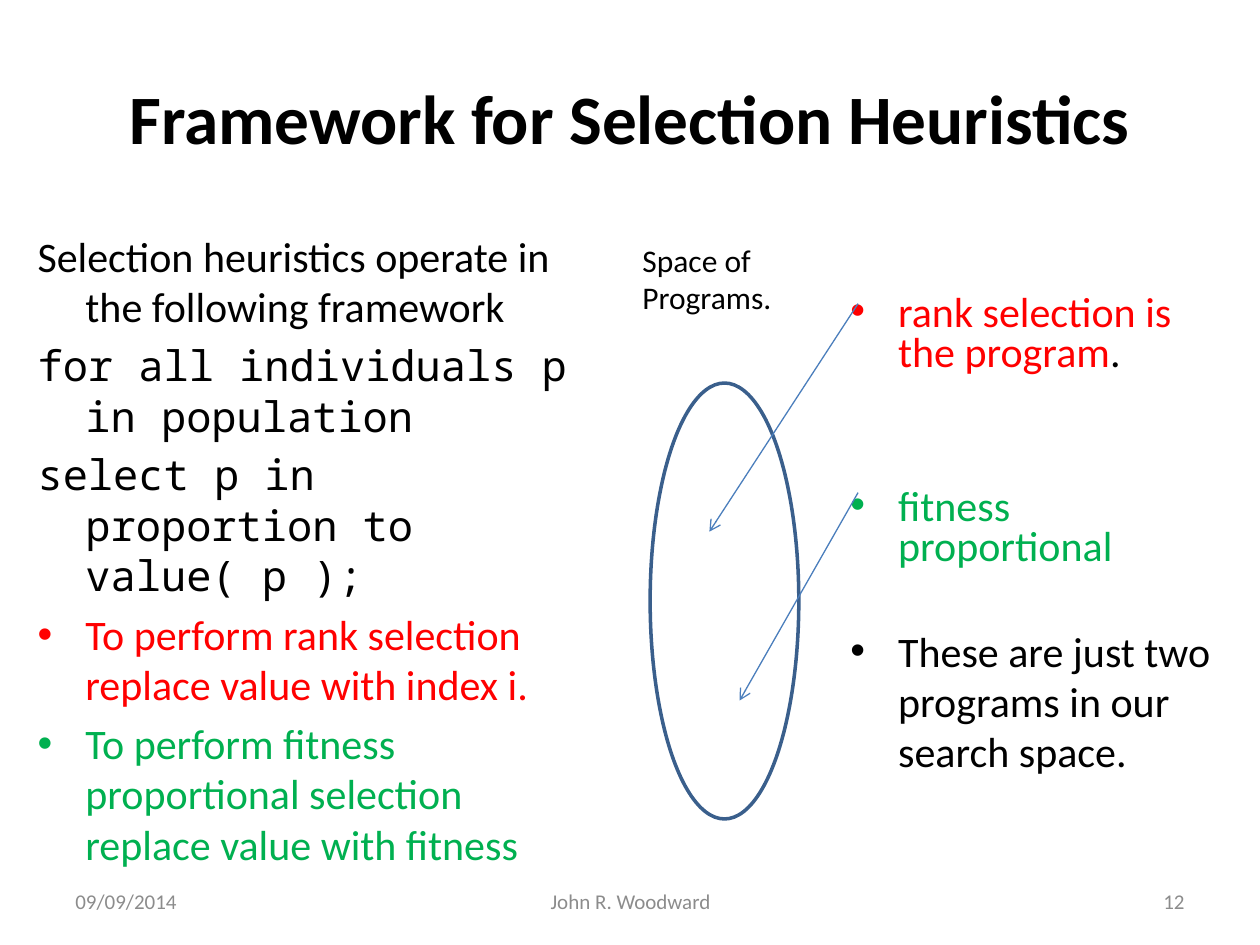
from dataclasses import dataclass
from typing import NamedTuple

from lxml.etree import SubElement
from pptx import Presentation
from pptx.dml.color import RGBColor
from pptx.enum.shapes import MSO_CONNECTOR, MSO_SHAPE
from pptx.enum.text import MSO_ANCHOR, PP_ALIGN
from pptx.oxml.ns import qn
from pptx.util import Inches, Pt

BLACK = RGBColor(0x00, 0x00, 0x00)
RED = RGBColor(0xFF, 0x00, 0x00)
GREEN = RGBColor(0x00, 0xB0, 0x50)
GREY = RGBColor(0x8C, 0x8C, 0x8C)
OUTLINE = RGBColor(0x3A, 0x5F, 0x8C)
ARROW = RGBColor(0x4B, 0x7E, 0xBC)
SANS = "Calibri"
MONO = "Noto Sans Mono"
HANG = Inches(0.38)


class Area(NamedTuple):
    left: float
    top: float
    width: float
    height: float


@dataclass
class Line:
    text: str
    color: RGBColor = BLACK
    size: float = 24
    font: str = SANS
    align: PP_ALIGN = PP_ALIGN.LEFT
    hanging: bool = False
    bullet: bool = False
    before: float = 0
    spacing: float = 1.0
    ending: str = ""  # closing black text


@dataclass
class Arrow:
    start: tuple[float, float]
    end: tuple[float, float]


def add_text(page, area: Area, lines: list[Line], anchor=MSO_ANCHOR.TOP,
             wrap: bool = True, inset_top: float = 0.05) -> None:
    box = page.shapes.add_textbox(*map(Inches, area))
    frame = box.text_frame
    frame.word_wrap = wrap
    frame.vertical_anchor = anchor
    frame.margin_top = Inches(inset_top)
    for index, line in enumerate(lines):
        para = frame.add_paragraph() if index else frame.paragraphs[0]
        write_line(para, line)


def write_line(para, line: Line) -> None:
    para.alignment = line.align
    para.space_before = Pt(line.before)
    para.line_spacing = line.spacing
    para.font.size = Pt(line.size)
    para.font.name = line.font
    for text, color in ((line.text, line.color), (line.ending, BLACK)):
        if text:
            span = para.add_run()
            span.text = text
            span.font.color.rgb = color
    properties = para._p.get_or_add_pPr()
    if line.hanging:
        properties.set("marL", str(HANG))
        properties.set("indent", str(-HANG))
    if line.bullet:
        bullet_font = properties.makeelement(qn("a:buFont"), {"typeface": "Arial"})
        bullet_char = properties.makeelement(qn("a:buChar"), {"char": "•"})
        defaults = properties.find(qn("a:defRPr"))
        defaults.addprevious(bullet_font)
        defaults.addprevious(bullet_char)


def add_arrow(page, arrow: Arrow) -> None:
    connector = page.shapes.add_connector(
        MSO_CONNECTOR.STRAIGHT, *map(Inches, arrow.start + arrow.end))
    connector.line.color.rgb = ARROW
    connector.line.width = Pt(0.75)
    SubElement(connector.line._get_or_add_ln(), qn("a:tailEnd"), type="arrow")
    SubElement(connector._element.spPr, qn("a:effectLst"))


FRAMEWORK = [
    Line("Selection heuristics operate in the following framework", hanging=True),
    Line("for all individuals p in population", font=MONO, hanging=True, before=4.8),
    Line("select p in proportion to value( p );", font=MONO, hanging=True, before=4.8),
    Line("To perform rank selection replace value with index i.", RED,
         hanging=True, bullet=True, before=4.8),
    Line("To perform fitness proportional selection replace value with fitness",
         GREEN, hanging=True, bullet=True, before=4.8),
]
PROGRAMS = [
    Line("rank selection is the program", RED, hanging=True, bullet=True,
         spacing=0.8, ending="."),
    Line("fitness proportional", GREEN, hanging=True, bullet=True,
         spacing=0.8, before=65),
    Line("These are just two programs in our search space.",
         hanging=True, bullet=True, before=31.5),
]
ARROWS = [Arrow((6.81, 3.91), (5.87, 5.56)), Arrow((6.81, 2.41), (5.63, 4.22))]
FOOTERS = [
    (Area(0.5, 6.95, 2.33, 0.4), "09/09/2014", PP_ALIGN.LEFT),
    (Area(7.17, 6.95, 2.33, 0.4), "12", PP_ALIGN.RIGHT),
    (Area(3.42, 6.95, 3.17, 0.4), "John R. Woodward", PP_ALIGN.CENTER),
]


def main() -> None:
    deck = Presentation()
    deck.slide_width, deck.slide_height = Inches(10), Inches(7.5)
    page = deck.slides.add_slide(deck.slide_layouts[5])

    # Title
    title = page.shapes.title
    title.left, title.top, title.width, title.height = map(
        Inches, Area(0.5, 0.3, 9, 1.25))
    title.text_frame.text = "Framework for Selection Heuristics"
    title.text_frame.vertical_anchor = MSO_ANCHOR.MIDDLE
    heading = title.text_frame.paragraphs[0]
    heading.alignment = PP_ALIGN.CENTER
    heading.font.name = SANS
    heading.font.size = Pt(39.6)
    heading.font.bold = True
    heading.font.color.rgb = BLACK

    # Framework on the left, example programs on the right
    add_text(page, Area(0.2, 1.78, 4.5, 5.43), FRAMEWORK)
    add_text(page, Area(6.65, 1.7, 3.07, 2.52), PROGRAMS, inset_top=0.64)

    # Program space with arrows from the two programs
    space = page.shapes.add_shape(
        MSO_SHAPE.OVAL, *map(Inches, Area(5.16, 3.04, 1.18, 3.46)))
    space.shadow.inherit = False
    space.fill.background()
    space.line.color.rgb = OUTLINE
    space.line.width = Pt(2)
    for arrow in ARROWS:
        add_arrow(page, arrow)
    add_text(page, Area(5, 1.86, 1.29, 0.71),
             [Line("Space of", size=18), Line("Programs.", size=18)], wrap=False)

    # Footer
    for area, text, align in FOOTERS:
        add_text(page, area, [Line(text, GREY, 12, align=align)], MSO_ANCHOR.MIDDLE)

    deck.save("out.pptx")


if __name__ == "__main__":
    main()
